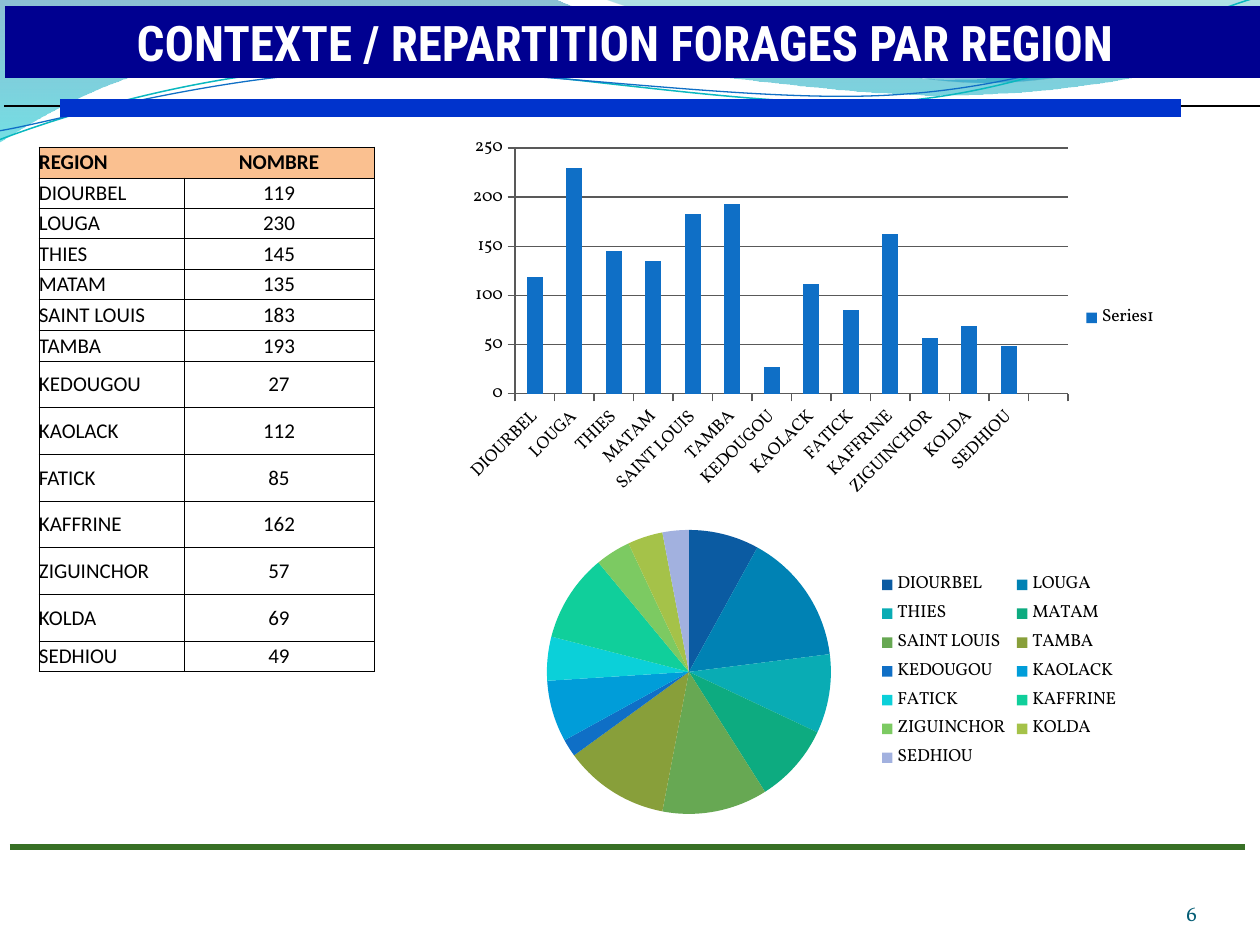
from itertools import pairwise
from lxml.etree import SubElement
from pptx import Presentation
from pptx.chart.data import CategoryChartData
from pptx.dml.color import RGBColor
from pptx.enum.chart import XL_CHART_TYPE as CHART, XL_LEGEND_POSITION as LEGEND, XL_TICK_MARK as TICK
from pptx.enum.shapes import MSO_CONNECTOR as CONNECTOR
from pptx.enum.text import MSO_ANCHOR as ANCHOR, MSO_AUTO_SIZE as AUTOSIZE, PP_ALIGN as ALIGN
from pptx.oxml import parse_xml
from pptx.oxml.ns import qn
from pptx.util import Emu, Pt

TITLE = "CONTEXTE / REPARTITION FORAGES PAR REGION"
HEADER = ("REGION", "NOMBRE")
REGIONS = [
    ("DIOURBEL", 119, 8, "0B5BA2"), ("LOUGA", 230, 15, "0082B4"),
    ("THIES", 145, 9, "09ACB4"), ("MATAM", 135, 9, "0DAB80"),
    ("SAINT LOUIS", 183, 12, "67A853"), ("TAMBA", 193, 12, "889F3A"),
    ("KEDOUGOU", 27, 2, "0F6FC6"), ("KAOLACK", 112, 7, "009DD9"),
    ("FATICK", 85, 5, "0BD0D9"), ("KAFFRINE", 162, 10, "10CF9B"),
    ("ZIGUINCHOR", 57, 4, "7CCA62"), ("KOLDA", 69, 4, "A5C249"),
    ("SEDHIOU", 49, 3, "A2B1DF"),
]
COLUMN_WIDTHS = (145, 190)
ROW_EDGES = (147, 178, 208, 239, 270, 300, 331, 362, 408, 455, 502, 548, 595, 642, 672)
BANDS = [
    ([(0, 0), (554, -1), (600, 21, 837, 79, 955, 79), (1074, 79, 1207, 33, 1260, 11),
      (1261, 45), (1239, 55, 1096, 96, 940, 95), (783, 95, 481, 35, 324, 43),
      (163, 45, 58, 105, -1, 142)],
     [(0, "0074A1", 45), (1, "00C6CF", 55)]),
    ([(604, -1), (641, 14, 859, 78, 969, 82), (1079, 87, 1211, 40, 1260, 26), (1260, 0)],
     [(0, "00A1A9", 30), (0.8, "008BBF", 45)]),
]
WAVES = [
    ([(-3, 110), (58, 90, 199, 52, 350, 53), (499, 53, 745, 118, 896, 114),
      (1049, 109, 1184, 45, 1260, 27)], "0AB8BF", 0.85),
    ([(-2, 101), (57, 94, 207, 57, 357, 58), (509, 58, 750, 112, 902, 107),
      (1052, 104, 1188, 52, 1262, 38)], "0F6FC6", 0.75),
]
WAVE_ANGLE = 357.3
RULES = [(4, 1260, 106, "000000", 1), (10, 1245, 847, "387026", 3), (60, 1181, 108, "0033CC", 10)]
PIE_BOX, PIE_PLOT, PIE_LEGEND = (501, 512, 630, 319), (46, 18, 284, 284), (375, 56, 246, 207)
BAR_BOX, BAR_PLOT = (452, 129, 718, 378), (63, 19, 553, 246)
SERIF = "Vollkorn"
SCALE = 914400 / 126


def px(*lengths):
    sizes = [Emu(round(length * SCALE)) for length in lengths]
    return sizes if len(sizes) > 1 else sizes[0]


def color(hex_code):
    return RGBColor.from_string(hex_code)


def style(font, name, size, hex_code, bold=False):
    font.name, font.size, font.bold = name, Pt(size), bold
    font.color.rgb = color(hex_code)


def add_outline(segments, close):
    start, *rest = [px(*segment[-2:]) for segment in segments]
    builder = slide.shapes.build_freeform(*start)
    builder.add_line_segments(rest, close=close)
    outline = builder.convert_to_shape()
    outline.shadow.inherit = False
    for line, segment in zip(list(outline._element.iter(qn("a:lnTo"))), segments[1:]):
        if len(segment) == 6:
            line.tag = qn("a:cubicBezTo")
            for index in (0, 2):
                x, y = px(*segment[index:index + 2])
                handle = SubElement(line, qn("a:pt"), x=str(x - outline.left), y=str(y - outline.top))
                line.insert(index // 2, handle)
    return outline


def add_band(segments, stops):
    band = add_outline(segments, True)
    band.line.fill.background()
    band.fill.gradient()
    band.fill.gradient_angle = 270
    for stop, (position, hex_code, opacity) in zip(band.fill.gradient_stops, stops):
        stop.position = position
        stop.color.rgb = color(hex_code)
    for rgb, stop in zip(band._element.spPr.iter(qn("a:srgbClr")), stops):
        SubElement(rgb, qn("a:alpha")).set("val", str(stop[2] * 1000))


def add_wave(segments, hex_code, width):
    wave = add_outline(segments, False)
    wave.rotation = WAVE_ANGLE
    wave.fill.background()
    wave.line.color.rgb = color(hex_code)
    wave.line.width = Pt(width)


def add_rule(left, right, y, hex_code, width):
    rule = slide.shapes.add_connector(CONNECTOR.STRAIGHT, *px(left, y, right, y))
    rule.line.color.rgb = color(hex_code)
    rule.line.width = Pt(width)
    SubElement(rule._element.spPr, qn("a:effectLst"))


def set_layout(part, box, frame, inner=False):
    for old in part.findall(qn("c:layout")):
        part.remove(old)
    x, y, w, h = (length / frame[2 + index % 2] for index, length in enumerate(box))
    target = '<c:layoutTarget val="inner"/>' if inner else ""
    layout = parse_xml(
        '<c:layout xmlns:c="http://schemas.openxmlformats.org/drawingml/2006/chart"><c:manualLayout>'
        f'{target}<c:xMode val="edge"/><c:yMode val="edge"/><c:x val="{x}"/><c:y val="{y}"/>'
        f'<c:w val="{w}"/><c:h val="{h}"/></c:manualLayout></c:layout>')
    part.insert(0 if inner else 1, layout)


def add_graph(kind, box, names, series_name, values, plot_box):
    data = CategoryChartData()
    data.categories = names
    data.add_series(series_name, values)
    chart = slide.shapes.add_chart(kind, *px(*box), data).chart
    style(chart.font, SERIF, 10, "000000")
    chart.has_title = False
    chart.has_legend = True
    chart.legend.position = LEGEND.RIGHT
    chart.legend.include_in_layout = False
    set_layout(chart._chartSpace.chart.plotArea, plot_box, box, inner=True)
    return chart


def set_borders(cell, hidden):
    props = cell._tc.get_or_add_tcPr()
    for index, side in enumerate(("lnL", "lnR", "lnT", "lnB")):
        border = SubElement(props, qn(f"a:{side}"), w="6350")
        if side == hidden:
            SubElement(border, qn("a:noFill"))
        else:
            SubElement(SubElement(border, qn("a:solidFill")), qn("a:srgbClr"), val="000000")
        props.insert(index, border)


def add_region_table(left):
    rows = [HEADER] + [region[:2] for region in REGIONS]
    heights = [bottom - top for top, bottom in pairwise(ROW_EDGES)]
    box = px(left, ROW_EDGES[0], sum(COLUMN_WIDTHS), sum(heights))
    table = slide.shapes.add_table(len(rows), len(COLUMN_WIDTHS), *box).table
    table.first_row = table.horz_banding = False
    for column, width in zip(table.columns, COLUMN_WIDTHS):
        column.width = px(width)
    for r, (row, height) in enumerate(zip(rows, heights)):
        table.rows[r].height = px(height)
        for c, content in enumerate(row):
            cell = table.cell(r, c)
            cell.margin_left = cell.margin_right = cell.margin_top = cell.margin_bottom = 0
            cell.vertical_anchor = ANCHOR.MIDDLE
            paragraph = cell.text_frame.paragraphs[0]
            paragraph.alignment = ALIGN.CENTER if c else ALIGN.LEFT
            run = paragraph.add_run()
            run.text = str(content)
            style(run.font, "Calibri", 12, "000000", r == 0)
            if r == 0:
                cell.fill.solid()
                cell.fill.fore_color.rgb = color("FAC090")
            else:
                cell.fill.background()
            set_borders(cell, ("lnR", "lnL")[c] if r == 0 else None)


def write(frame, content, alignment, anchor, *font):
    frame.word_wrap, frame.auto_size = True, AUTOSIZE.NONE
    frame.vertical_anchor = anchor
    paragraph = frame.paragraphs[0]
    paragraph.alignment = alignment
    run = paragraph.add_run()
    run.text = content
    style(run.font, *font)


deck = Presentation()
deck.slide_width, deck.slide_height = px(1260, 945)
slide = deck.slides.add_slide(deck.slide_layouts[5])

for band in BANDS:
    add_band(*band)
for wave in WAVES:
    add_wave(*wave)
for rule in RULES:
    add_rule(*rule)

page = slide.shapes.add_textbox(*px(1092, 876, 105, 50)).text_frame
page.margin_left = page.margin_right = page.margin_top = page.margin_bottom = 0
write(page, "6", ALIGN.RIGHT, ANCHOR.BOTTOM, SERIF, 12, "045D75")

names, counts, shares, slice_colors = zip(*REGIONS)
pie = add_graph(CHART.PIE, PIE_BOX, names, "Series 1", shares, PIE_PLOT)
set_layout(pie.legend._element, PIE_LEGEND, PIE_BOX)
pie.plots[0].vary_by_categories = True
for index, hex_code in enumerate(slice_colors):
    fill = pie.plots[0].series[0].points[index].format.fill
    fill.solid()
    fill.fore_color.rgb = color(hex_code)

bars = add_graph(CHART.COLUMN_CLUSTERED, BAR_BOX, names + ("",), "", counts + (None,), BAR_PLOT)
bars.plots[0].vary_by_categories = False
bars.plots[0].gap_width = 150
series = bars.plots[0].series[0]
series.format.fill.solid()
series.format.fill.fore_color.rgb = color("0F6FC6")
series._element.remove(series._element.find(qn("c:tx")))
labels = series._element.find(qn("c:cat")).find(".//" + qn("c:strCache"))
labels.remove(labels.findall(qn("c:pt"))[-1])
scale = bars.value_axis
scale.minimum_scale, scale.maximum_scale, scale.major_unit = 0, 250, 50
for axis in (scale, bars.category_axis):
    axis.major_tick_mark = TICK.CROSS
    axis.format.line.color.rgb = color("595959")
    style(axis.tick_labels.font, SERIF, 10, "000000")
scale.major_gridlines.format.line.color.rgb = color("595959")
for axis in (scale, bars.category_axis):
    axis.major_tick_mark = TICK.OUTSIDE
bars.category_axis._element.txPr.find(qn("a:bodyPr")).set("rot", "-2700000")

add_region_table(39)

title = slide.shapes.title
title.left, title.top, title.width, title.height = px(5, 6, 1255, 72)
title.fill.solid()
title.fill.fore_color.rgb = color("000090")
title.text_frame.margin_right = px(28)
write(title.text_frame, TITLE, ALIGN.CENTER, ANCHOR.MIDDLE, "Roboto Condensed", 28, "FFFFFF", True)
slide.shapes._spTree.append(title._element)

deck.save("out.pptx")
